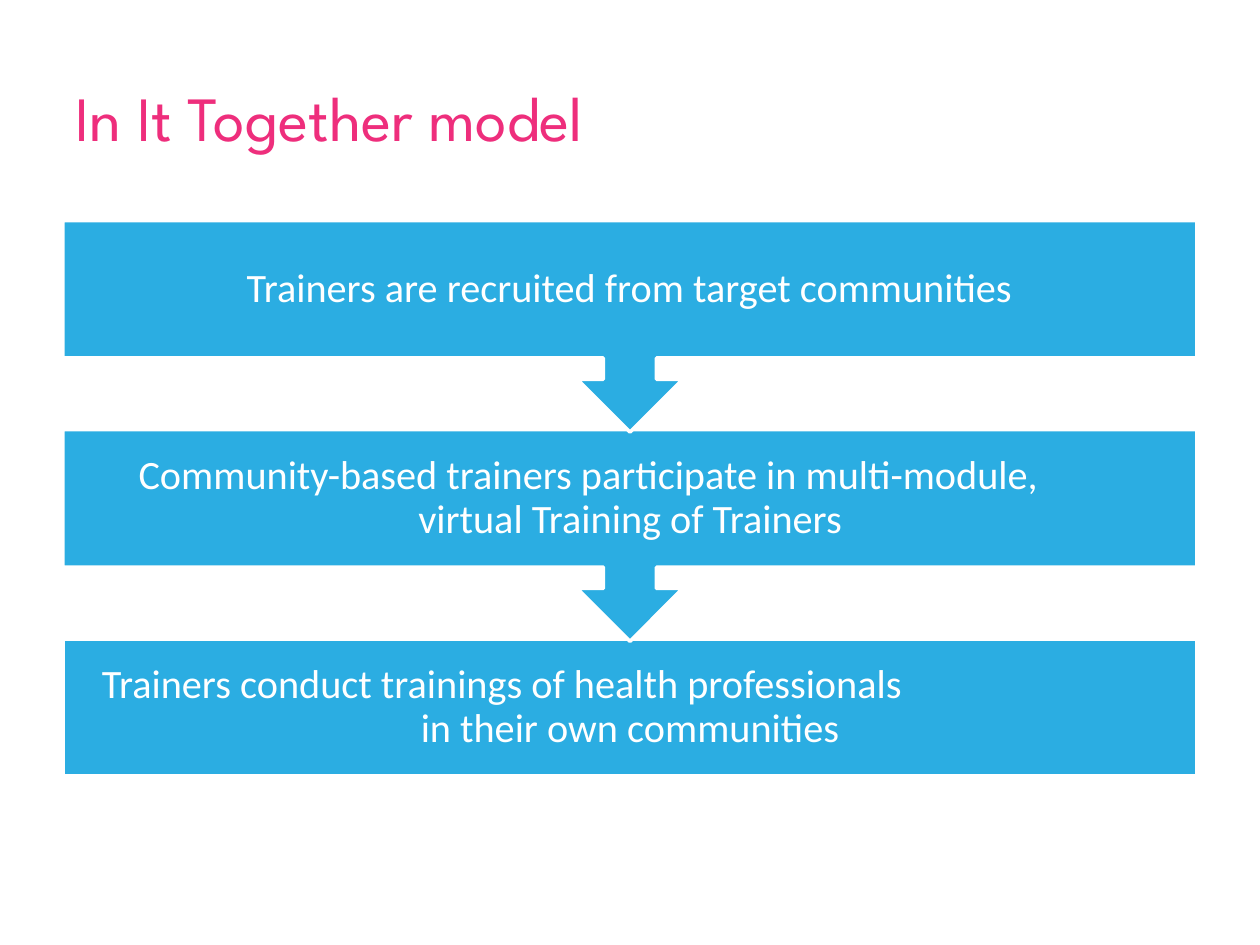
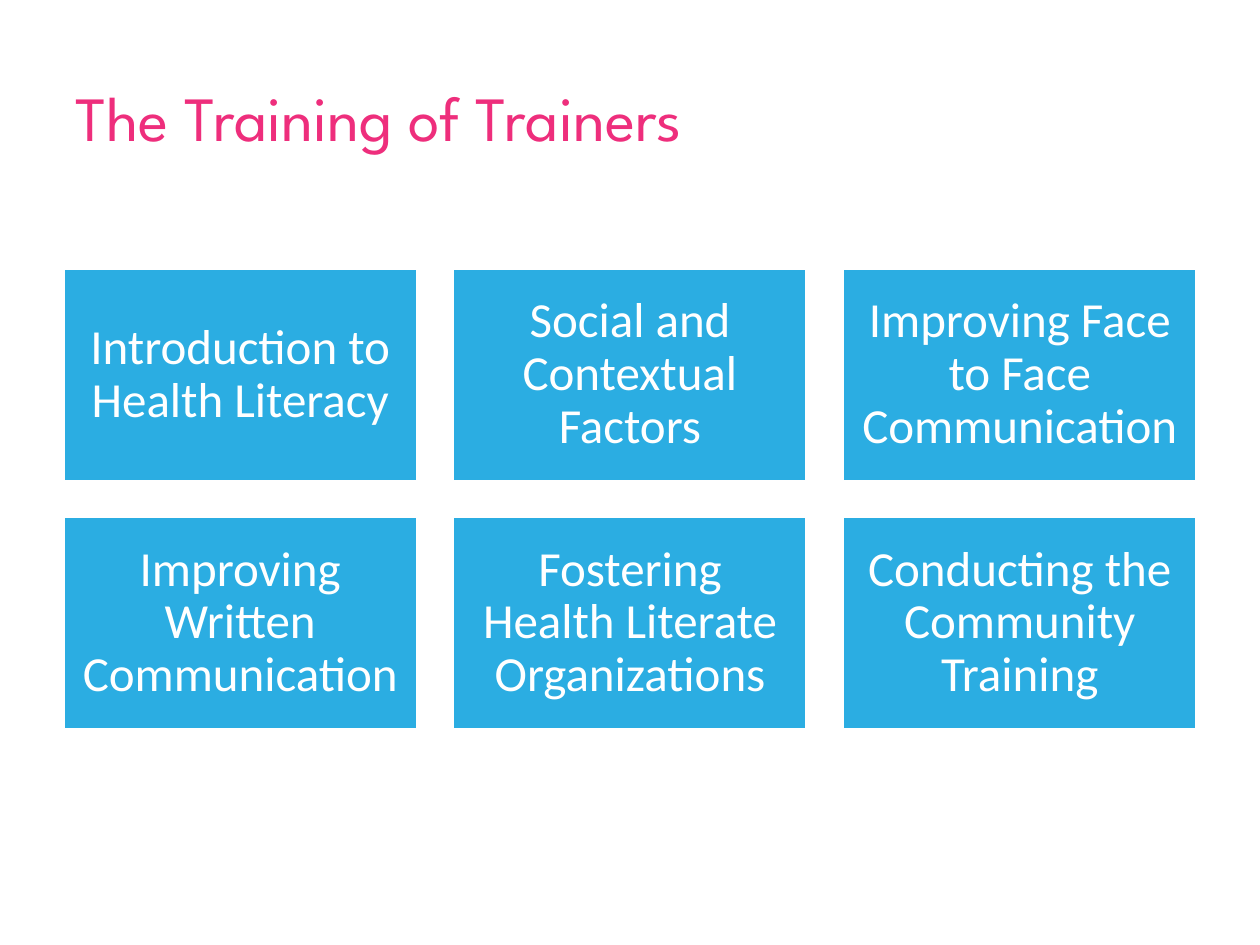
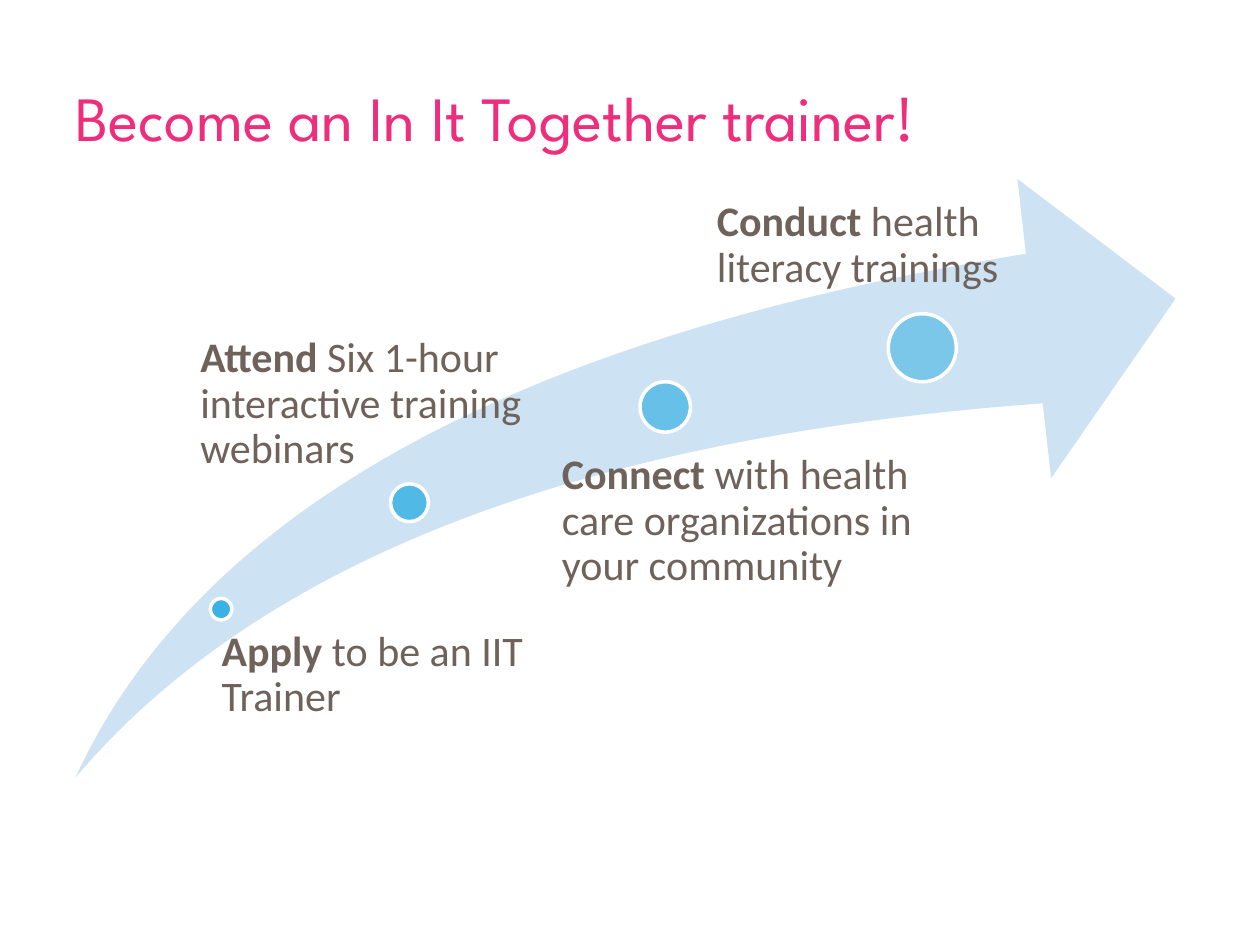
import dataclasses

import lxml.etree
import pptx
import pptx.dml.color
import pptx.enum.shapes
import pptx.enum.text
import pptx.oxml.ns
import pptx.util

Inches, Pt = pptx.util.Inches, pptx.util.Pt
SHAPE = pptx.enum.shapes.MSO_SHAPE
ALIGN = pptx.enum.text.PP_ALIGN
ANCHOR = pptx.enum.text.MSO_ANCHOR


@dataclasses.dataclass(frozen=True)
class Theme:
    pink: str = "EE2E7C"
    blue: str = "2BADE2"
    pale: str = "CDE3F4"
    brown: str = "6F625A"
    white: str = "FFFFFF"
    title_font: str = "League Spartan"
    body_font: str = "Calibri"
    title_size: int = 36
    flow_size: int = 23
    module_size: int = 28
    step_size: int = 24
    outline: int = 2


T = Theme()
CONTENT_LEFT, CONTENT_WIDTH = 0.5, 9


def rgb(value):
    return pptx.dml.color.RGBColor.from_string(value)


def set_all(target, values):
    for name, value in values.items():
        setattr(target, name, value)


def style_font(font, name, size, color, bold=False):
    set_all(font, {"name": name, "size": Pt(size), "bold": bold})
    font.color.rgb = rgb(color)


def frame(sp, anchor, insets):
    """Set wrapping, anchor and insets (left, top, right, bottom)."""
    tf = sp.text_frame
    sides = ("margin_left", "margin_top", "margin_right", "margin_bottom")
    set_all(tf, {"word_wrap": True, "vertical_anchor": anchor,
                 **{side: Inches(v) for side, v in zip(sides, insets)}})
    return tf


def add_shape(slide, kind, box, fill, outlined=True, alpha=None):
    sp = slide.shapes.add_shape(kind, *map(Inches, box))
    sp.shadow.inherit = False
    sp.fill.solid()
    sp.fill.fore_color.rgb = rgb(fill)
    if alpha is not None:
        color = sp.fill._xPr.find(".//" + pptx.oxml.ns.qn("a:srgbClr"))
        lxml.etree.SubElement(color, pptx.oxml.ns.qn("a:alpha"),
                              val=str(alpha * 1000))
    if outlined:
        sp.line.color.rgb = rgb(T.white)
        sp.line.width = Pt(T.outline)
    else:
        sp.line.fill.background()
    return sp


def add_block(slide, kind, box, text, size, inset):
    """Blue block with centred white text."""
    sp = add_shape(slide, kind, box, T.blue)
    p = frame(sp, ANCHOR.MIDDLE, [inset] * 4).paragraphs[0]
    p.text = text
    set_all(p, {"alignment": ALIGN.CENTER, "line_spacing": 0.9})
    for r in p.runs:
        style_font(r.font, T.body_font, size, T.white)
    return sp


def new_slide(prs, title):
    slide = prs.slides.add_slide(prs.slide_layouts[6])
    sp = slide.shapes.add_textbox(*map(Inches, (CONTENT_LEFT, 0.3, CONTENT_WIDTH, 1.25)))
    p = frame(sp, ANCHOR.MIDDLE, (0.1, 0.05, 0.1, 0.05)).paragraphs[0]
    r = p.add_run()
    r.text = title
    style_font(r.font, T.title_font, T.title_size, T.pink)
    return slide


def add_flow(slide, box, steps):
    """Stack of steps; each one but the last points down to the next."""
    left, top, width, height = box
    bar = 1.09
    pitch = (height - bar) / (len(steps) - 1)
    last = len(steps) - 1
    # Lower steps go first, so that each arrow tip lies on top
    for i, (text, starts) in reversed(list(enumerate(steps))):
        kind, tall = ((SHAPE.RECTANGLE, bar) if i == last
                      else (SHAPE.DOWN_ARROW_CALLOUT, pitch + 0.02))
        sp = add_block(slide, kind, (left, top + i * pitch, width, tall),
                       text, T.flow_size, 0.18)
        if starts:
            # Each line begins at its own indent
            first, second = starts
            p = sp.text_frame.paragraphs[0]
            p.alignment = ALIGN.LEFT
            pPr = p._p.get_or_add_pPr()
            pPr.set("marL", str(Inches(second)))
            pPr.set("indent", str(Inches(first - second)))


def add_modules(slide, box, names, cols=3, gap=0.28):
    """Grid of equal blocks that fills the box row by row."""
    left, top, width, height = box
    rows = len(names) // cols
    w = (width - gap * (cols - 1)) / cols
    h = (height - gap * (rows - 1)) / rows
    for i, name in enumerate(names):
        row, col = divmod(i, cols)
        cell = (left + col * (w + gap), top + row * (h + gap), w, h)
        add_block(slide, SHAPE.RECTANGLE, cell, name, T.module_size, 0.12)


def add_path(slide, box, steps):
    """Rising arrow with a growing dot and a label for each step."""
    left, top, width, height = box
    arrow = add_shape(slide, SHAPE.SWOOSH_ARROW, box, T.pale, outlined=False)
    arrow.adjustments[0] = arrow.adjustments[1] = 0.25
    for (x, y, size), alpha, label, inset, anchor, verb, rest in steps:
        # Dot
        add_shape(slide, SHAPE.OVAL, (left + x, top + y, size, size),
                  T.blue, alpha=alpha)
        # Label
        lx, ly, lw, lh = label
        sp = slide.shapes.add_textbox(*map(Inches, (left + lx, top + ly, lw, lh)))
        p = frame(sp, anchor, (inset, 0, 0, 0)).paragraphs[0]
        p.line_spacing = 0.9
        for text, bold in ((verb, True), (rest, False)):
            r = p.add_run()
            r.text = text
            style_font(r.font, T.body_font, T.step_size, T.brown, bold)


# Text and, where the lines are offset, the start of each line
FLOW = [
    ("Trainers are recruited from target communities", None),
    ("Community-based trainers participate in multi-module,\v"
     "virtual Training of Trainers", (0.42, 2.64)),
    ("Trainers conduct trainings of health professionals\v"
     "in their own communities", (0.13, 2.66)),
]

MODULES = [
    "Introduction to Health Literacy",
    "Social and Contextual Factors",
    "Improving Face to Face Communication",
    "Improving Written Communication",
    "Fostering Health Literate Organizations",
    "Conducting the Community Training",
]

# Dot (x, y, size), opacity, label box, label inset, anchor, verb, rest
PATH_STEPS = [
    ((1.07, 3.33, 0.17), 90, (1.07, 3.58, 2.7, 1.13), 0.09, ANCHOR.TOP,
     "Apply", " to be an IIT Trainer"),
    ((2.5, 2.42, 0.3), 77, (0.83, 0.16, 3.4, 2.17), 0.16, ANCHOR.BOTTOM,
     "Attend", " Six 1-hour interactive training webinars"),
    ((4.48, 1.61, 0.4), 63, (3.65, 2.18, 3.17, 2.56), 0.21, ANCHOR.TOP,
     "Connect", " with health care organizations in your community"),
    ((6.45, 1.07, 0.54), 50, (4.8, 0.17, 3.1, 3.41), 0.29, ANCHOR.TOP,
     "Conduct", " health literacy trainings"),
]


def main():
    prs = pptx.Presentation()
    prs.slide_width, prs.slide_height = Inches(10), Inches(7.5)

    slide = new_slide(prs, "In It Together model")
    add_flow(slide, (CONTENT_LEFT, 1.75, CONTENT_WIDTH, 4.41), FLOW)

    slide = new_slide(prs, "The Training of Trainers")
    add_modules(slide, (CONTENT_LEFT, 2.13, CONTENT_WIDTH, 3.66), MODULES)

    slide = new_slide(prs, "Become an In It Together trainer!")
    add_path(slide, (0.6, 1.42, 8.73, 4.75), PATH_STEPS)

    prs.save("out.pptx")


if __name__ == "__main__":
    main()
